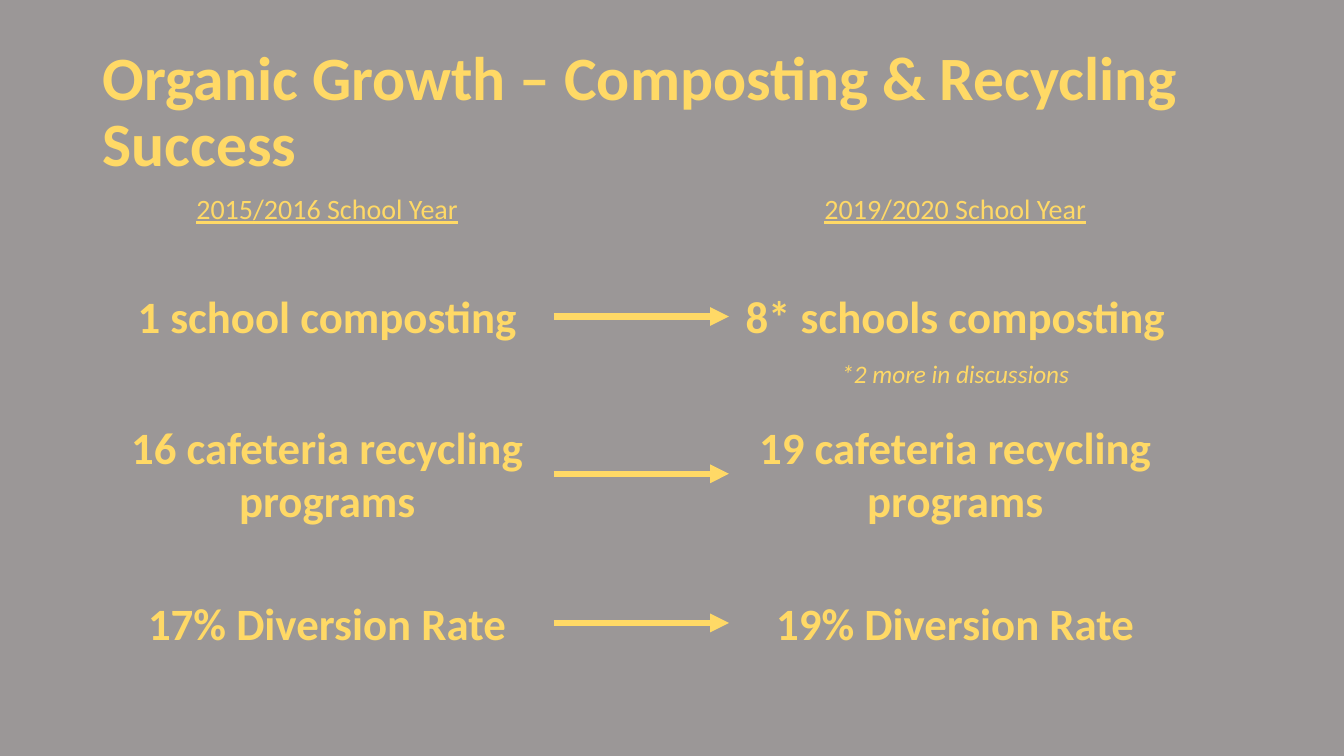
from lxml import etree
from pptx import Presentation, util as u
from pptx.dml.color import RGBColor
from pptx.enum import shapes, text
from pptx.oxml.ns import qn

COLORS = {"background": "9B9797", "gold": "FFD966"}
FONT = "Calibri"
COLUMN_LEFTS = (1, 7.23)
COLUMN_WIDTH = 4.49
YEARS = ("2015/2016 School Year", "2019/2020 School Year")
COMPARISONS = (
    (2.82, 0.64, "1 school composting", "8* schools composting"),
    (4.11, 1.18, "16 cafeteria recycling\nprograms", "19 cafeteria recycling\nprograms"),
    (5.86, 0.64, "17% Diversion Rate", "19% Diversion Rate"),
)


def color(name):
    """Return the named palette color."""
    return RGBColor.from_string(COLORS[name])


def write_text(shape, content, size, align=text.PP_ALIGN.CENTER, spacing=1.0,
               anchor=text.MSO_ANCHOR.TOP, **style):
    """Fill a shape with formatted text, one paragraph per line."""
    frame = shape.text_frame
    frame.word_wrap = True
    frame.auto_size = text.MSO_AUTO_SIZE.NONE
    frame.vertical_anchor = anchor
    frame.text = content
    for paragraph in frame.paragraphs:
        paragraph.alignment = align
        paragraph.line_spacing = spacing
        font = paragraph.runs[0].font
        font.name, font.size = FONT, u.Pt(size)
        font.color.rgb = color("gold")
        for attribute, value in style.items():
            setattr(font, attribute, value)


def add_text(slide, box, content, size, **style):
    """Add a text box at the given inches and return it."""
    shape = slide.shapes.add_textbox(*map(u.Inches, box))
    write_text(shape, content, size, **style)
    return shape


def add_title(slide, box, content):
    """Place and format the title placeholder."""
    title = slide.shapes.title
    title.left, title.top, title.width, title.height = map(u.Inches, box)
    write_text(title, content, 44, align=text.PP_ALIGN.LEFT, spacing=0.9,
               anchor=text.MSO_ANCHOR.MIDDLE, bold=True)


def add_arrow(slide, start, end):
    """Join the facing sides of two boxes with an arrow."""
    arrow = slide.shapes.add_connector(shapes.MSO_CONNECTOR.STRAIGHT, 0, 0, 0, 0)
    arrow.begin_connect(start, 3)
    arrow.end_connect(end, 1)
    arrow.line.color.rgb = color("gold")
    arrow.line.width = u.Pt(4.5)
    properties = arrow.element.spPr
    etree.SubElement(properties.find(qn("a:ln")), qn("a:tailEnd"), type="triangle")
    etree.SubElement(properties, qn("a:effectLst"))


def add_row(slide, top, height, contents, size, **style):
    """Write one text in each column and return the boxes."""
    return [add_text(slide, (left, top, COLUMN_WIDTH, height), content, size, **style)
            for left, content in zip(COLUMN_LEFTS, contents)]


def build_slide(presentation):
    """Build the before-and-after comparison slide."""
    slide = presentation.slides.add_slide(presentation.slide_layouts[5])
    slide.background.fill.solid()
    slide.background.fill.fore_color.rgb = color("background")
    add_title(slide, (0.92, 0.4, 11.5, 1.45),
              "Organic Growth – Composting & Recycling Success")
    add_row(slide, 1.85, 0.44, YEARS, 20, underline=True)
    for top, height, *contents in COMPARISONS:
        before, after = add_row(slide, top, height, contents, 32, bold=True)
        add_arrow(slide, before, after)
    add_text(slide, (COLUMN_LEFTS[1], 3.51, COLUMN_WIDTH, 0.4),
             "*2 more in discussions", 18, italic=True)


def main():
    """Create and save the presentation."""
    presentation = Presentation()
    presentation.slide_width = u.Inches(13.33)
    presentation.slide_height = u.Inches(7.5)
    build_slide(presentation)
    presentation.save("out.pptx")


if __name__ == "__main__":
    main()
